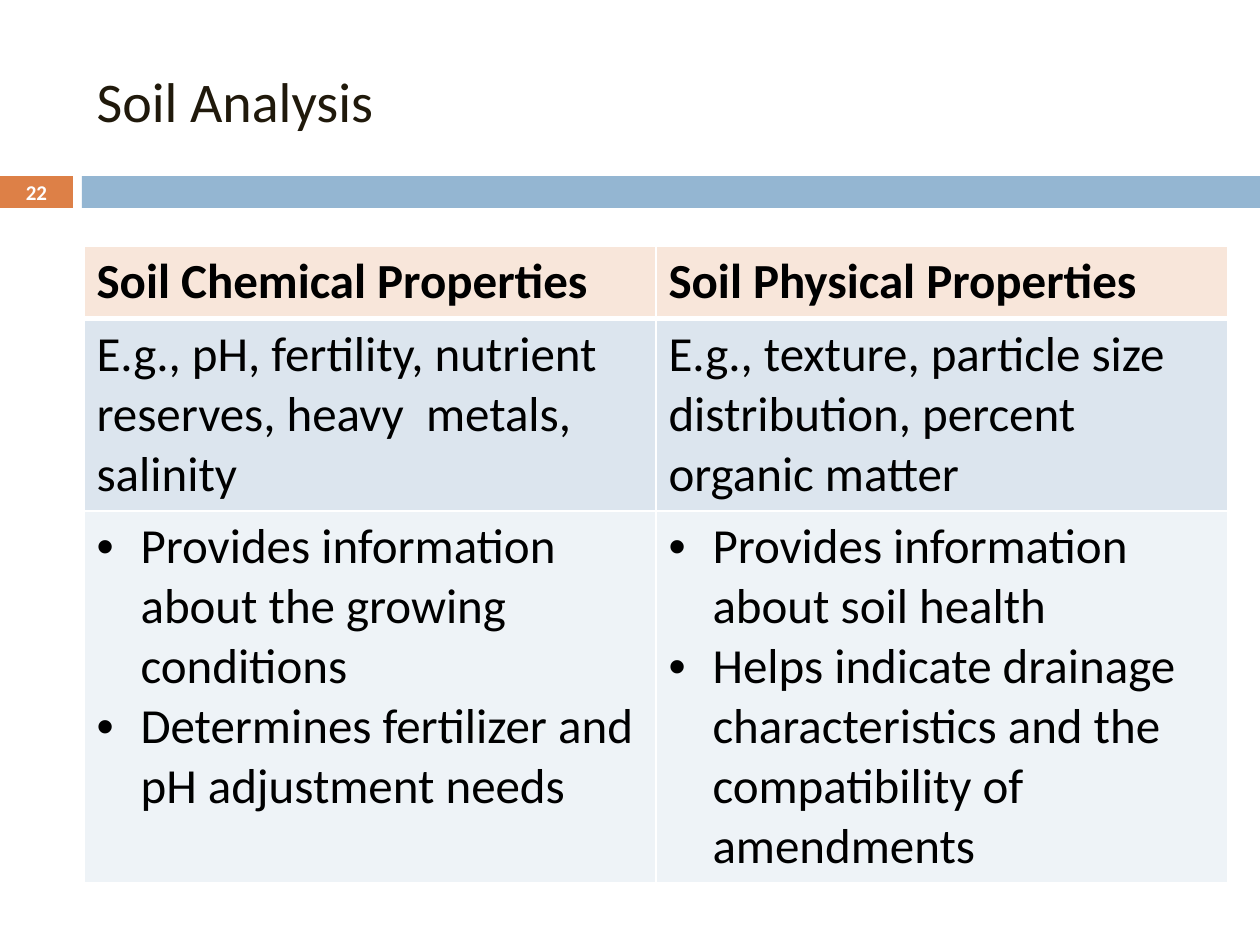
from lxml import etree
from pptx import Presentation
from pptx.dml.color import RGBColor
from pptx.enum.shapes import MSO_SHAPE
from pptx.enum.text import MSO_ANCHOR, PP_ALIGN
from pptx.oxml.ns import qn
from pptx.util import Pt

RECTANGLE = MSO_SHAPE.RECTANGLE
MIDDLE = MSO_ANCHOR.MIDDLE
LEFT, CENTER = PP_ALIGN.LEFT, PP_ALIGN.CENTER

EMU_PER_PX = 914400 / 126
TITLE_ONLY = 5
FONT = "Calibri"
WHITE, BLACK = "FFFFFF", "000000"
ORANGE, BLUE, TITLE_COLOR = "DD8047", "94B6D2", "20190B"
ROW_FILLS = ["F8E6DA", "DCE5EE", "EEF3F7"]
ROW_HEIGHTS = [72, 192, 372]
COLUMN_WIDTH = 572
BULLET_INDENT = 44

SOIL_PROPERTIES = [
    [["Soil Chemical Properties"], ["Soil Physical Properties"]],
    [
        ["E.g., pH, fertility, nutrient reserves, heavy  metals, salinity"],
        ["E.g., texture, particle size distribution, percent organic matter"],
    ],
    [
        [
            "Provides information about the growing conditions",
            "Determines fertilizer and pH adjustment needs",
        ],
        [
            "Provides information about soil health",
            "Helps indicate drainage characteristics and the compatibility of amendments",
        ],
    ],
]


def px(length):
    return round(length * EMU_PER_PX)


def box(left, top, width, height):
    return px(left), px(top), px(width), px(height)


def color(hex_code):
    return RGBColor.from_string(hex_code)


def format_paragraph(paragraph, size, hex_code, bold=False, align=LEFT):
    paragraph.alignment = align
    for run in paragraph.runs:
        run.font.name = FONT
        run.font.size = Pt(size)
        run.font.bold = bold
        run.font.color.rgb = color(hex_code)


def add_bar(slide, left, width, hex_code):
    bar = slide.shapes.add_shape(RECTANGLE, *box(left, 176, width, 32))
    bar.shadow.inherit = False
    bar.fill.solid()
    bar.fill.fore_color.rgb = color(hex_code)
    bar.line.fill.background()


def set_title(slide, text):
    title = slide.shapes.title
    title.left, title.top, title.width, title.height = box(84, 32, 1124, 136)
    title.text_frame.text = text
    title.text_frame.vertical_anchor = MIDDLE
    format_paragraph(title.text_frame.paragraphs[0], 32, TITLE_COLOR)


def add_page_number(slide, number):
    frame = slide.shapes.add_textbox(*box(0, 175, 73, 34)).text_frame
    frame.word_wrap = True
    frame.vertical_anchor = MIDDLE
    frame.margin_top = frame.margin_bottom = 0
    frame.text = number
    format_paragraph(frame.paragraphs[0], 12, WHITE, bold=True, align=CENTER)


def add_bullet(paragraph):
    properties = paragraph._p.get_or_add_pPr()
    properties.set("marL", str(px(BULLET_INDENT)))
    properties.set("indent", str(-px(BULLET_INDENT)))
    etree.SubElement(properties, qn("a:buFont"), typeface="Arial")
    etree.SubElement(properties, qn("a:buChar"), char="•")


def set_borders(cell, widths):
    """Draw white borders, with widths in points for left, right, top and bottom."""
    properties = cell._tc.get_or_add_tcPr()
    for index, (side, width) in enumerate(zip("LRTB", widths)):
        line = etree.Element(qn(f"a:ln{side}"), w=str(Pt(width)))
        fill = etree.SubElement(line, qn("a:solidFill"))
        etree.SubElement(fill, qn("a:srgbClr"), val=WHITE)
        properties.insert(index, line)


def fill_cell(cell, lines, row):
    cell.fill.solid()
    cell.fill.fore_color.rgb = color(ROW_FILLS[row])
    set_borders(cell, (1, 1, 3 if row == 1 else 1, 3 if row == 0 else 1))
    cell.text_frame.text = "\n".join(lines)
    for paragraph in cell.text_frame.paragraphs:
        if row == 2:
            add_bullet(paragraph)
        format_paragraph(paragraph, 28, BLACK, bold=row == 0)


def add_property_table(slide):
    frame = slide.shapes.add_table(
        len(ROW_HEIGHTS), 2, *box(84, 246, 2 * COLUMN_WIDTH, sum(ROW_HEIGHTS))
    )
    table = frame.table
    for column in table.columns:
        column.width = px(COLUMN_WIDTH)
    for row, cells in enumerate(SOIL_PROPERTIES):
        table.rows[row].height = px(ROW_HEIGHTS[row])
        for column, lines in enumerate(cells):
            fill_cell(table.cell(row, column), lines, row)


def main():
    presentation = Presentation()
    presentation.slide_width, presentation.slide_height = px(1260), px(945)
    slide = presentation.slides.add_slide(presentation.slide_layouts[TITLE_ONLY])
    add_bar(slide, 0, 73, ORANGE)
    add_bar(slide, 82, 1178, BLUE)
    add_property_table(slide)
    set_title(slide, "Soil Analysis")
    add_page_number(slide, "22")
    presentation.save("out.pptx")


if __name__ == "__main__":
    main()
